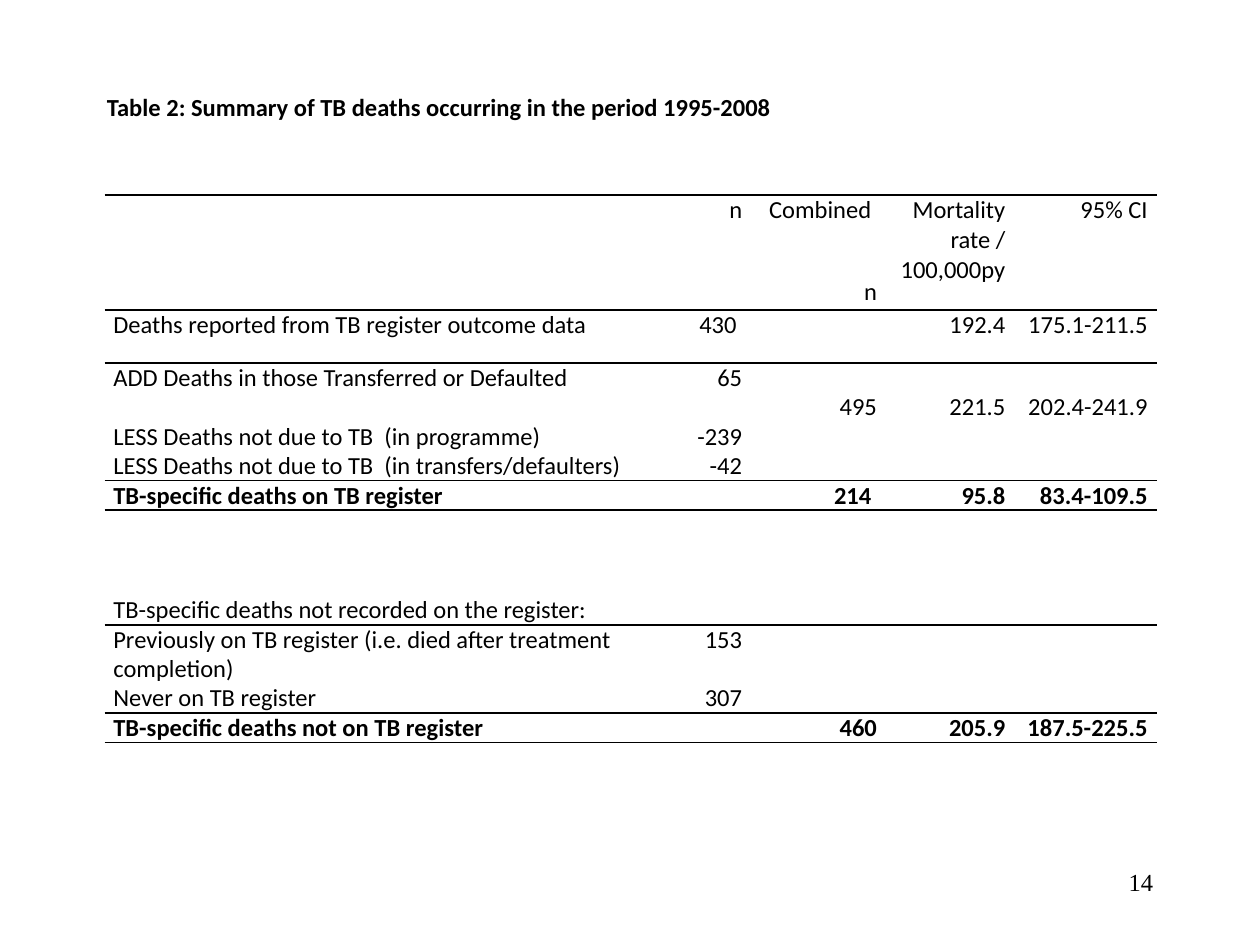
"""Build the summary table slide of TB deaths."""
from dataclasses import dataclass

from lxml.etree import SubElement
from pptx import Presentation
from pptx.dml.color import RGBColor
from pptx.enum.text import MSO_ANCHOR as Anchor, PP_ALIGN as Align
from pptx.oxml.ns import qn
from pptx.util import Inches, Pt

COLORS = {"ink": "000000"}
SIZE = 14
PLAIN = "{2D5ABB26-0587-4C30-8999-92F81FD0307C}"
WIDTHS = (4.56, 0.57, 1.07, 1.02, 1.13)
RULES = {0: 1.5, 1: 1.5, 6: 1, 7: 1, 10: 1, 11: 1}


@dataclass
class Row:
    cells: tuple
    height: float = 0.21
    bold: bool = False
    align: Align = Align.JUSTIFY
    anchor: Anchor = Anchor.TOP


@dataclass
class Label:
    text: str
    box: tuple
    font: str = "Calibri"
    bold: bool = False
    align: Align = Align.LEFT


ROWS = (
    Row(("", "n", "Combined \nn", "Mortality rate / 100,000py", "95% CI"), 0.91),
    Row(("Deaths reported from TB register outcome data", "430 ", "",
         "192.4", "175.1-211.5"), 0.42),
    Row(("ADD Deaths in those Transferred or Defaulted", "65", "", "", "")),
    Row(("", "", "495", "221.5", "202.4-241.9")),
    Row(("LESS Deaths not due to TB  (in programme)", "-239", "", "", "")),
    Row(("LESS Deaths not due to TB  (in transfers/defaulters)", "-42", "", "", "")),
    Row(("TB-specific deaths on TB register", "", "214 ", "95.8", "83.4-109.5"),
        bold=True),
    Row(("TB-specific deaths not recorded on the register:", "", "", "", ""),
        0.91, anchor=Anchor.BOTTOM),
    Row(("Previously on TB register (i.e. died after treatment completion)",
         "153", "", "", ""), 0.42, align=Align.LEFT),
    Row(("Never on TB register", "307", "", "", ""), align=Align.LEFT),
    Row(("TB-specific deaths not on TB register", "", "460", "205.9", "187.5-225.5"),
        bold=True),
)
LABELS = (
    Label("14", (7.17, 6.83, 2.08, 0.5), "Times New Roman", align=Align.RIGHT),
    Label("Table 2: Summary of TB deaths occurring in the period 1995-2008",
          (0.75, 0.68, 8.43, 0.34), bold=True),
)


def add_run(para, text: str, face: str, bold: bool) -> None:
    run = para.add_run()
    run.text = text
    font = run.font
    font.name, font.size, font.bold = face, Pt(SIZE), bold
    font.color.rgb = RGBColor.from_string(COLORS["ink"])


def add_label(slide, label: Label) -> None:
    frame = slide.shapes.add_textbox(*map(Inches, label.box)).text_frame
    frame.word_wrap = True
    para = frame.paragraphs[0]
    para.alignment = label.align
    add_run(para, label.text, label.font, label.bold)


def add_rule(cell, side: str, width: float) -> None:
    line = SubElement(cell._tc.get_or_add_tcPr(), qn(f"a:{side}"), w=str(Pt(width)))
    fill = SubElement(line, qn("a:solidFill"))
    SubElement(fill, qn("a:srgbClr"), val=COLORS["ink"])


def fill_cell(cell, text: str, row: Row, align: Align) -> None:
    cell.margin_left = cell.margin_right = Inches(0.07)
    cell.margin_top = cell.margin_bottom = 0
    cell.vertical_anchor = row.anchor
    frame = cell.text_frame
    if not text:
        end = SubElement(frame.paragraphs[0]._p, qn("a:endParaRPr"))
        end.set("sz", str(SIZE * 100))
        return
    for i, part in enumerate(text.split("\n")):
        para = frame.add_paragraph() if i else frame.paragraphs[0]
        para.alignment = align
        para.space_before, para.space_after = Pt(24), Pt(6)
        add_run(para, part, "Calibri", row.bold)


def add_table(slide) -> None:
    box = map(Inches, (0.83, 1.55, sum(WIDTHS), sum(row.height for row in ROWS)))
    table = slide.shapes.add_table(len(ROWS), len(WIDTHS), *box).table
    table.first_row = table.horz_banding = False
    table._tbl.tblPr.find(qn("a:tableStyleId")).text = PLAIN
    for col, width in zip(table.columns, WIDTHS):
        col.width = Inches(width)
    for r, row in enumerate(ROWS):
        table.rows[r].height = Inches(row.height)
        for c, text in enumerate(row.cells):
            cell = table.cell(r, c)
            fill_cell(cell, text, row, Align.RIGHT if c else row.align)
            for side, edge in (("lnT", r), ("lnB", r + 1)):
                if edge in RULES:
                    add_rule(cell, side, RULES[edge])
            cell.fill.background()


def main() -> None:
    deck = Presentation()
    deck.slide_width, deck.slide_height = Inches(10), Inches(7.5)
    slide = deck.slides.add_slide(deck.slide_layouts[6])
    number, title = LABELS
    add_label(slide, number)
    add_table(slide)
    add_label(slide, title)
    deck.save("out.pptx")


if __name__ == "__main__":
    main()
